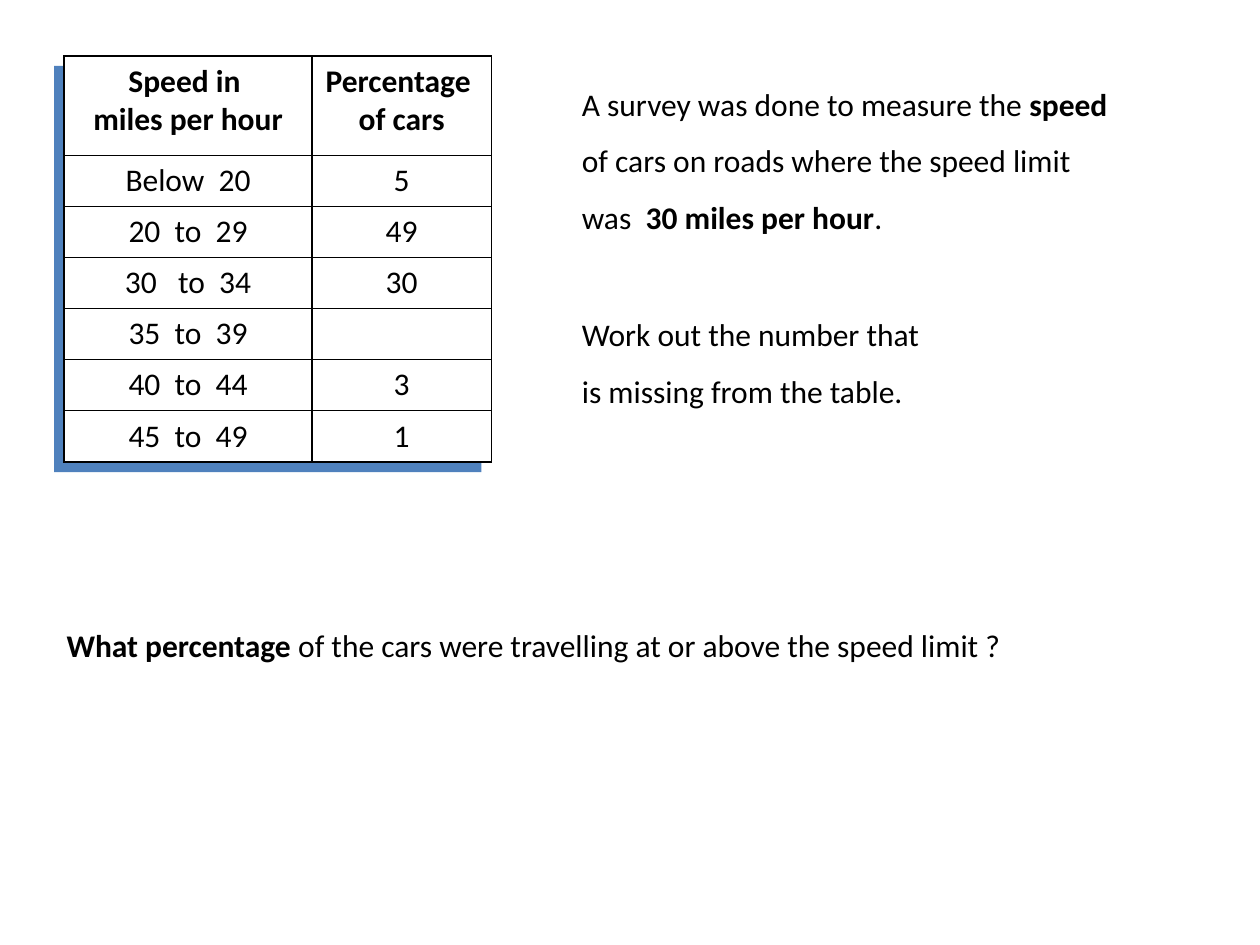
import pptx
import pptx.dml.color
import pptx.enum.shapes
import pptx.enum.text
import pptx.oxml
import pptx.util
from pptx.oxml.ns import nsdecls

BLACK = pptx.dml.color.RGBColor(0x00, 0x00, 0x00)
WHITE = pptx.dml.color.RGBColor(0xFF, 0xFF, 0xFF)
BLUE = pptx.dml.color.RGBColor(0x4F, 0x81, 0xBD)

WIDTH, HEIGHT = pptx.util.Inches(10), pptx.util.Inches(7.5)
BACKING_OFFSET = pptx.util.Inches(0.08)
COLUMN_SHARES = (0.58, 0.42)
HEADER_SHARE = 0.245

SPEED_ROWS = [
    ("Speed in \nmiles per hour", "Percentage \nof cars"),
    ("Below  20", "5"),
    ("20  to  29", "49"),
    ("30   to  34", "30"),
    ("35  to  39", ""),
    ("40  to  44", "3"),
    ("45  to  49", "1"),
]

# Each passage is a list of (words, bold)
SURVEY = [
    ("A survey was done to measure the ", False),
    ("speed", True),
    (" of cars on roads where the speed limit was  ", False),
    ("30 miles per hour", True),
    (".", False),
]
TASK = [("Work out the number that is missing from the table.", False)]
QUESTION = [
    ("What percentage ", True),
    ("of the cars were travelling at or above the speed limit ?", False),
]


def share_box(left, top, width, height):
    """Turn shares of the slide into lengths."""
    return (int(left * WIDTH), int(top * HEIGHT),
            int(width * WIDTH), int(height * HEIGHT))


def style_font(font):
    font.name = "Calibri"
    font.size = pptx.util.Pt(18)
    font.color.rgb = BLACK


def add_borders(cell):
    properties = cell._tc.get_or_add_tcPr()
    for position, side in enumerate(("lnL", "lnR", "lnT", "lnB")):
        properties.insert(position, pptx.oxml.parse_xml(
            f'<a:{side} {nsdecls("a")} w="12700"><a:solidFill>'
            f'<a:srgbClr val="{BLACK}"/></a:solidFill></a:{side}>'))


def fill_cell(cell, words, is_header):
    cell.fill.solid()
    cell.fill.fore_color.rgb = WHITE
    cell.text = words
    for paragraph in cell.text_frame.paragraphs:
        paragraph.alignment = pptx.enum.text.PP_ALIGN.CENTER
        style_font(paragraph.font)
        paragraph.font.bold = is_header
    add_borders(cell)


def add_speed_table(slide, box):
    left, top, width, height = box

    # Blue backing, shifted down and to the left
    backing = slide.shapes.add_shape(
        pptx.enum.shapes.MSO_SHAPE.RECTANGLE,
        left - BACKING_OFFSET, top + BACKING_OFFSET, width, height)
    backing.shadow.inherit = False
    backing.fill.solid()
    backing.fill.fore_color.rgb = BLUE
    backing.line.fill.background()

    # Speed bands and their percentages
    speeds = slide.shapes.add_table(
        len(SPEED_ROWS), len(COLUMN_SHARES), *box).table
    speeds.first_row = speeds.horz_banding = False
    for column, share in zip(speeds.columns, COLUMN_SHARES):
        column.width = int(width * share)
    band_share = (1 - HEADER_SHARE) / (len(SPEED_ROWS) - 1)
    for index, entries in enumerate(SPEED_ROWS):
        is_header = index == 0
        speeds.rows[index].height = int(
            height * (HEADER_SHARE if is_header else band_share))
        for column, words in enumerate(entries):
            fill_cell(speeds.cell(index, column), words, is_header)


def add_passage(slide, box, passage):
    frame = slide.shapes.add_textbox(*box).text_frame
    frame.word_wrap = True
    frame.auto_size = pptx.enum.text.MSO_AUTO_SIZE.SHAPE_TO_FIT_TEXT
    paragraph = frame.paragraphs[0]
    paragraph.line_spacing = 1.5
    style_font(paragraph.font)
    for words, bold in passage:
        run = paragraph.add_run()
        run.text = words
        run.font.bold = bold


def main():
    presentation = pptx.Presentation()
    presentation.slide_width, presentation.slide_height = WIDTH, HEIGHT
    slide = presentation.slides.add_slide(presentation.slide_layouts[6])

    add_speed_table(slide, share_box(0.051, 0.059, 0.339, 0.43))
    add_passage(slide, share_box(0.452, 0.307, 0.303, 0.135), TASK)
    add_passage(slide, share_box(0.452, 0.063, 0.45, 0.195), SURVEY)
    add_passage(slide, share_box(0.043, 0.636, 0.874, 0.075), QUESTION)

    presentation.save("out.pptx")


if __name__ == "__main__":
    main()
